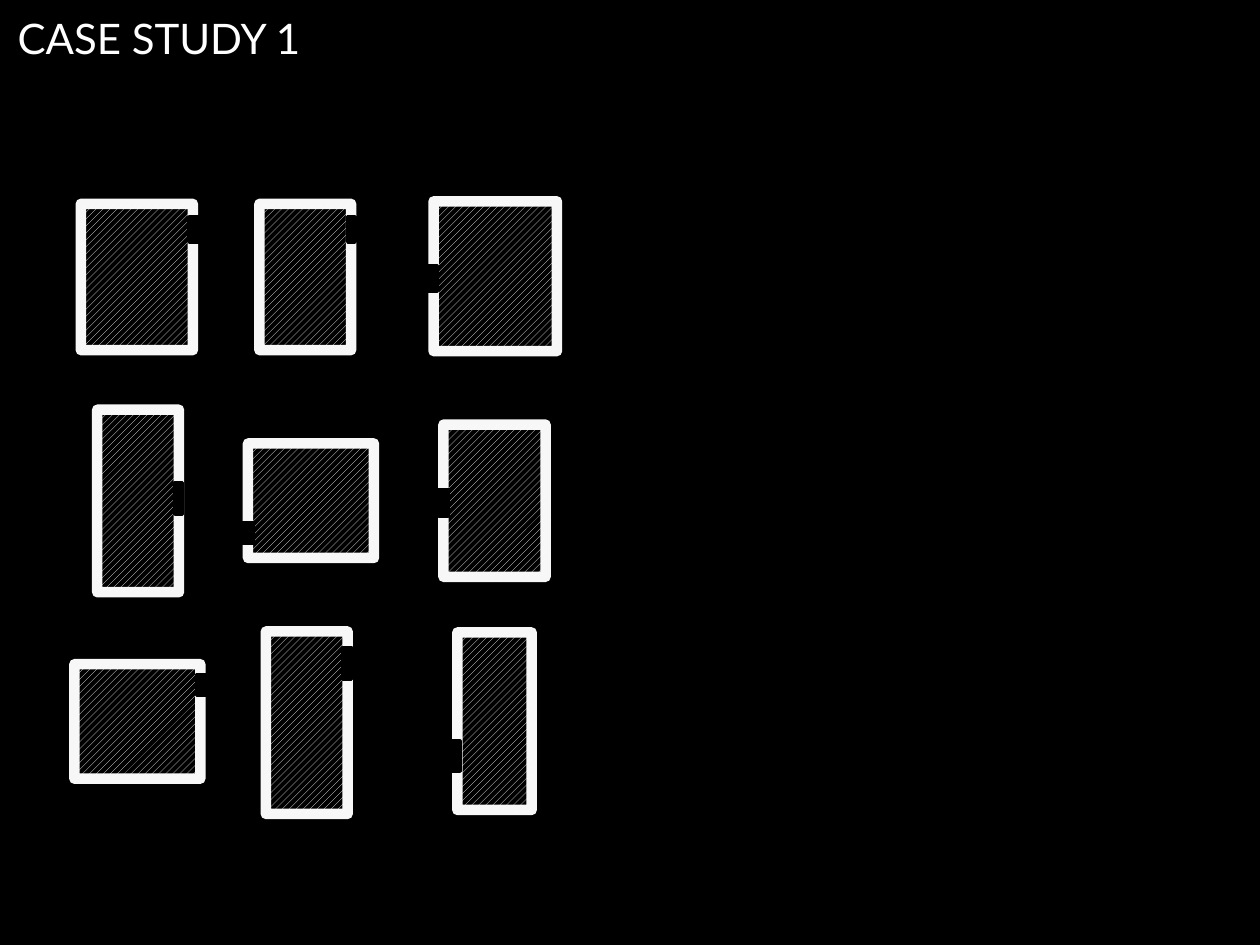
from lxml.etree import SubElement
from pptx import Presentation
from pptx.dml.color import RGBColor
from pptx.enum.dml import MSO_PATTERN as Hatch
from pptx.enum.shapes import MSO_SHAPE as Shape
from pptx.enum.text import MSO_ANCHOR as Anchor, MSO_AUTO_SIZE as Fit, PP_ALIGN as Align
from pptx.oxml.ns import qn
from pptx.util import Cm, Pt

BLACK = RGBColor(0, 0, 0)
WHITE = RGBColor(255, 255, 255)

# Each room and its door, in cm: left, top, width, height
ROOMS = [
    ((1.63, 4.11, 2.26, 2.95), (3.81, 4.37, 0.2, 0.51)),
    ((5.23, 4.11, 1.85, 2.95), (7.01, 4.37, 0.15, 0.51)),
    ((1.96, 8.26, 1.65, 3.68), (3.53, 9.73, 0.15, 0.64)),
    ((5.36, 12.73, 1.65, 3.68), (6.91, 13.06, 0.18, 0.64)),
    ((1.5, 13.39, 2.54, 2.31), (3.96, 13.61, 0.23, 0.41)),
    ((5, 8.94, 2.54, 2.31), (4.88, 10.54, 0.23, 0.41)),
    ((8.74, 4.06, 2.49, 3.02), (8.61, 5.36, 0.2, 0.51)),
    ((8.94, 8.56, 2.06, 3.07), (8.84, 9.88, 0.2, 0.53)),
    ((9.22, 12.75, 1.5, 3.58), (9.09, 14.94, 0.18, 0.61)),
]


def apply(obj, vals):
    for key, val in vals.items():
        setattr(obj, key, val)


class Plan:
    font = {"name": "Lato", "size": Pt(24), "bold": False}
    frame = {"word_wrap": True, "vertical_anchor": Anchor.TOP,
             "auto_size": Fit.SHAPE_TO_FIT_TEXT}

    def __init__(self, slide):
        self.slide = slide
        back = slide.background.fill
        back.solid()
        back.fore_color.rgb = BLACK

    def title(self, text, box):
        head = self.slide.shapes.title
        apply(head, dict(zip(("left", "top", "width", "height"), map(Cm, box))))
        head.text_frame.text = text
        apply(head.text_frame, self.frame)
        par = head.text_frame.paragraphs[0]
        par.alignment = Align.LEFT
        apply(par.runs[0].font, self.font)
        par.runs[0].font.color.rgb = WHITE

    def rect(self, box, color, width):
        item = self.slide.shapes.add_shape(Shape.RECTANGLE, *map(Cm, box))
        item.shadow.inherit = False
        item.line.color.rgb = color
        item.line.width = Pt(width)
        return item

    def room(self, box):
        item = self.rect(box, WHITE, 6)
        item.fill.patterned()
        item.fill.pattern = Hatch.WIDE_UPWARD_DIAGONAL
        item.fill.fore_color.rgb = WHITE
        item.fill.back_color.rgb = BLACK
        # Slightly see-through wall
        tone = item.line._get_or_add_ln().find(".//" + qn("a:srgbClr"))
        SubElement(tone, qn("a:alpha"), val="97000")

    def door(self, box):
        item = self.rect(box, BLACK, 2)
        item.fill.solid()
        item.fill.fore_color.rgb = BLACK


def main():
    deck = Presentation()
    deck.slide_width, deck.slide_height = Cm(25.4), Cm(19.05)
    plan = Plan(deck.slides.add_slide(deck.slide_layouts[5]))

    # Rooms with their doors
    for room, door in ROOMS:
        plan.room(room)
        plan.door(door)

    # Heading
    plan.title("CASE STUDY 1", (0.1, 0.13, 25.4, 1.27))
    deck.save("out.pptx")


if __name__ == "__main__":
    main()
